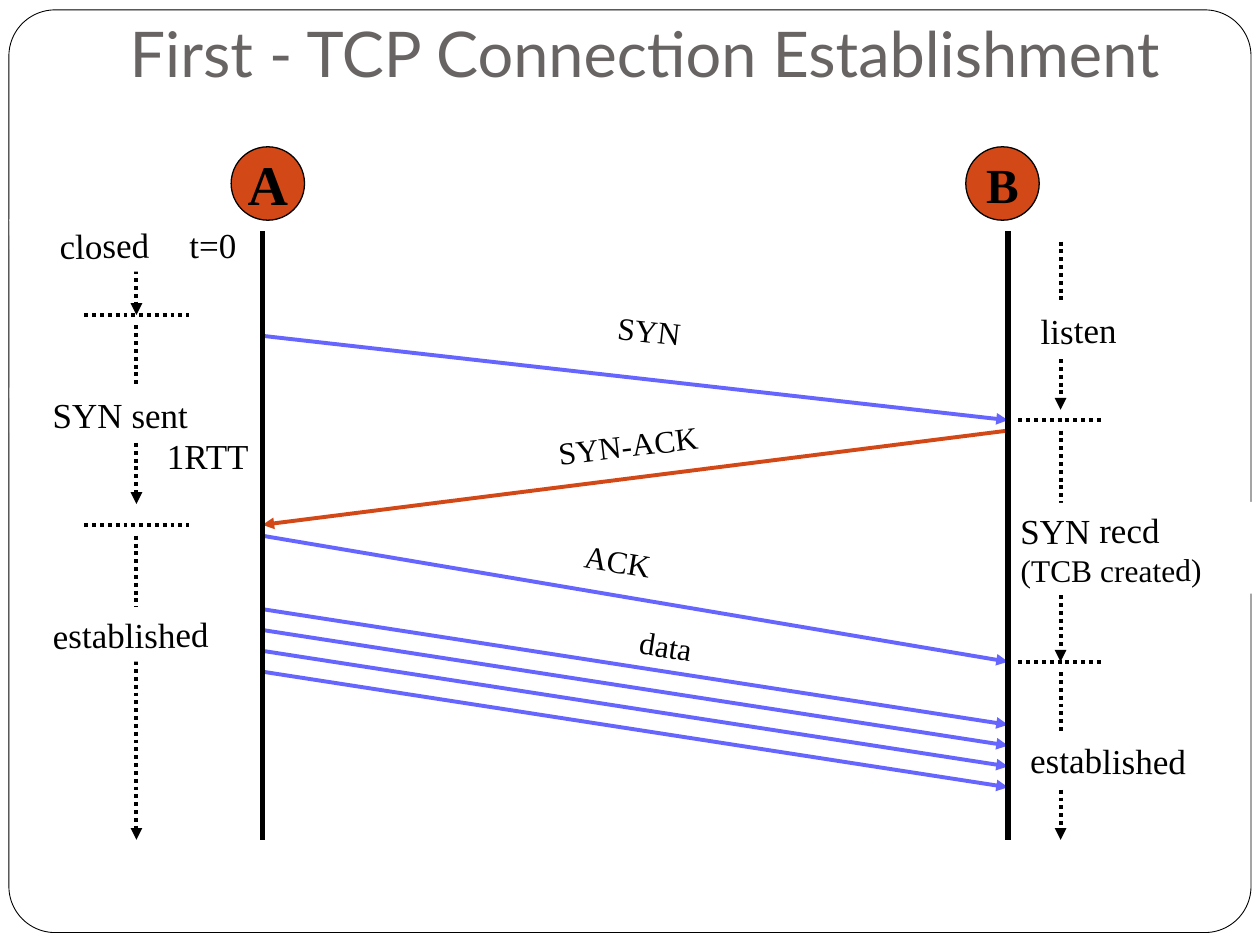
from lxml import etree
from pptx import Presentation
from pptx.dml.color import RGBColor
from pptx.enum import dml, shapes, text
from pptx.oxml import ns
from pptx.util import Cm, Pt

COLORS = {"ink": "000000", "paper": "FFFFFF", "title": "696464", "host": "D34817", "send": "6666FF"}
SERIF = "Times New Roman"
TITLE = "First - TCP Connection Establishment"
A_X, B_X, TOP, BOTTOM = 5.29, 20.32, 4.66, 16.93
LEFT_STATE, RIGHT_STATE = 2.75, 21.38
DATA_START, DATA_STEP, DATA_DROP, DATA_COUNT = 12.28, 0.42, 2.33, 4

HOSTS = [("A", 4.66, 32), ("B", 19.47, 28)]
STATE_SPANS = [
    (LEFT_STATE, TOP, 6.35),
    (LEFT_STATE, 6.56, 10.16),
    (LEFT_STATE, 10.8, BOTTOM),
    (RIGHT_STATE, 4.87, 8.26),
    (RIGHT_STATE, 8.68, 13.34),
    (RIGHT_STATE, 13.55, BOTTOM),
]
TICKS = [(1.7, 3.81, 6.35), (1.7, 3.81, 10.58), (20.53, 22.23, 8.47), (20.53, 22.23, 13.34)]
MESSAGES = [
    (A_X, 6.77, B_X, 8.47, "send"),
    (B_X, 8.68, A_X, 10.58, "host"),
    (A_X, 10.8, B_X, 13.34, "send"),
]
for number in range(DATA_COUNT):
    start = DATA_START + number * DATA_STEP
    MESSAGES.append((A_X, start, B_X, start + DATA_DROP, "send"))

STATES = [
    ("closed", (0.2, 4.39, 3.81, 1.1), 359, "center"),
    ("SYN sent", (0.2, 7.8, 4.45, 1.1), 359.6, "center"),
    ("established", (0.41, 12.24, 4.45, 1.1), 359.5, "center"),
    ("listen", (20.73, 6.1, 2.95, 1.1), 359.7, "left"),
    ("SYN recd\n(TCB created)", (20.32, 10.13, 5.08, 1.85), 359.7, "left"),
    ("established", (20.52, 14.78, 4.45, 1.1), 0.5, "left"),
]
TIMES = [("t=0", (3.48, 4.39, 1.63, 1.1)), ("1RTT", (3.07, 8.64, 2.24, 1.1))]
MESSAGE_LABELS = [
    ("SYN", (8.86, 6.15, 8.43, 1.27), 6.3),
    ("SYN-ACK", (6.3, 8.46, 12.75, 1.27), 353.2),
    ("ACK", (10.16, 10.8, 4.55, 1.27), 9.5),
    ("data", (10.16, 12.5, 6.5, 1.27), 9),
]
ALIGN = {"left": text.PP_ALIGN.LEFT, "center": text.PP_ALIGN.CENTER}


def color(name):
    return RGBColor.from_string(COLORS[name])


def write(box, words, sizes=(20,), font=SERIF, ink="ink", bold=False,
          align="center", anchor=text.MSO_ANCHOR.TOP, wrap=True):
    frame = box.text_frame
    frame.word_wrap = wrap
    frame.auto_size = text.MSO_AUTO_SIZE.NONE
    frame.vertical_anchor = anchor
    frame.text = words
    for para, size in zip(frame.paragraphs, sizes):
        para.alignment = ALIGN[align]
        for span in para.runs:
            span.font.name = font
            span.font.size = Pt(size)
            span.font.bold = bold
            span.font.color.rgb = color(ink)


def add_label(page, words, place, rotation=0, fill=None, **style):
    box = page.shapes.add_textbox(*map(Cm, place))
    box.rotation = rotation
    if fill:
        box.fill.solid()
        box.fill.fore_color.rgb = color(fill)
    write(box, words, **style)


def add_outline(page, kind, place, fill, width):
    shape = page.shapes.add_shape(kind, *map(Cm, place))
    shape.shadow.inherit = False
    shape.fill.solid()
    shape.fill.fore_color.rgb = color(fill)
    shape.line.color.rgb = color("ink")
    shape.line.width = Pt(width)
    return shape


def add_line(page, ends, ink="ink", width=2.25, dotted=False, arrow=False):
    line = page.shapes.add_connector(shapes.MSO_CONNECTOR.STRAIGHT, *map(Cm, ends))
    line.line.color.rgb = color(ink)
    line.line.width = Pt(width)
    if dotted:
        line.line.dash_style = dml.MSO_LINE.ROUND_DOT
    properties = line.element.spPr
    if arrow:
        etree.SubElement(properties.find(ns.qn("a:ln")), ns.qn("a:tailEnd"), type="triangle")
    etree.SubElement(properties, ns.qn("a:effectLst"))


def main():
    deck = Presentation()
    deck.slide_width, deck.slide_height = Cm(25.4), Cm(19.05)
    page = deck.slides.add_slide(deck.slide_layouts[5])

    border = add_outline(page, shapes.MSO_SHAPE.ROUNDED_RECTANGLE, (0.18, 0.2, 25.04, 18.6), "paper", 0.5)
    border.adjustments[0] = 0.05

    title = page.shapes.title
    title.left, title.top, title.width, title.height = map(Cm, (1.47, 0.2, 23.06, 1.7))
    write(title, TITLE, sizes=(36,), font="Lato", ink="title", anchor=text.MSO_ANCHOR.MIDDLE)
    title.element.getparent().append(title.element)

    for x, top, bottom in STATE_SPANS:
        add_line(page, (x, top, x, bottom), dotted=True, arrow=True)
    for left, right, y in TICKS:
        add_line(page, (left, y, right, y), dotted=True)
    for words, place, rotation, align in STATES:
        add_label(page, words, place, rotation, fill="paper", sizes=(20, 18), align=align)
    for words, place in TIMES:
        add_label(page, words, place, wrap=False)

    for *ends, ink in MESSAGES:
        add_line(page, ends, ink=ink, arrow=True)
    for words, place, rotation in MESSAGE_LABELS:
        add_label(page, words, place, rotation, sizes=(18,))

    for x in (A_X, B_X):
        add_line(page, (x, TOP, x, BOTTOM), width=3)
    for name, left, size in HOSTS:
        host = add_outline(page, shapes.MSO_SHAPE.OVAL, (left, 2.96, 1.48, 1.48), "host", 0.75)
        write(host, name, sizes=(size,), bold=True, anchor=text.MSO_ANCHOR.MIDDLE, wrap=False)

    deck.save("out.pptx")


if __name__ == "__main__":
    main()
